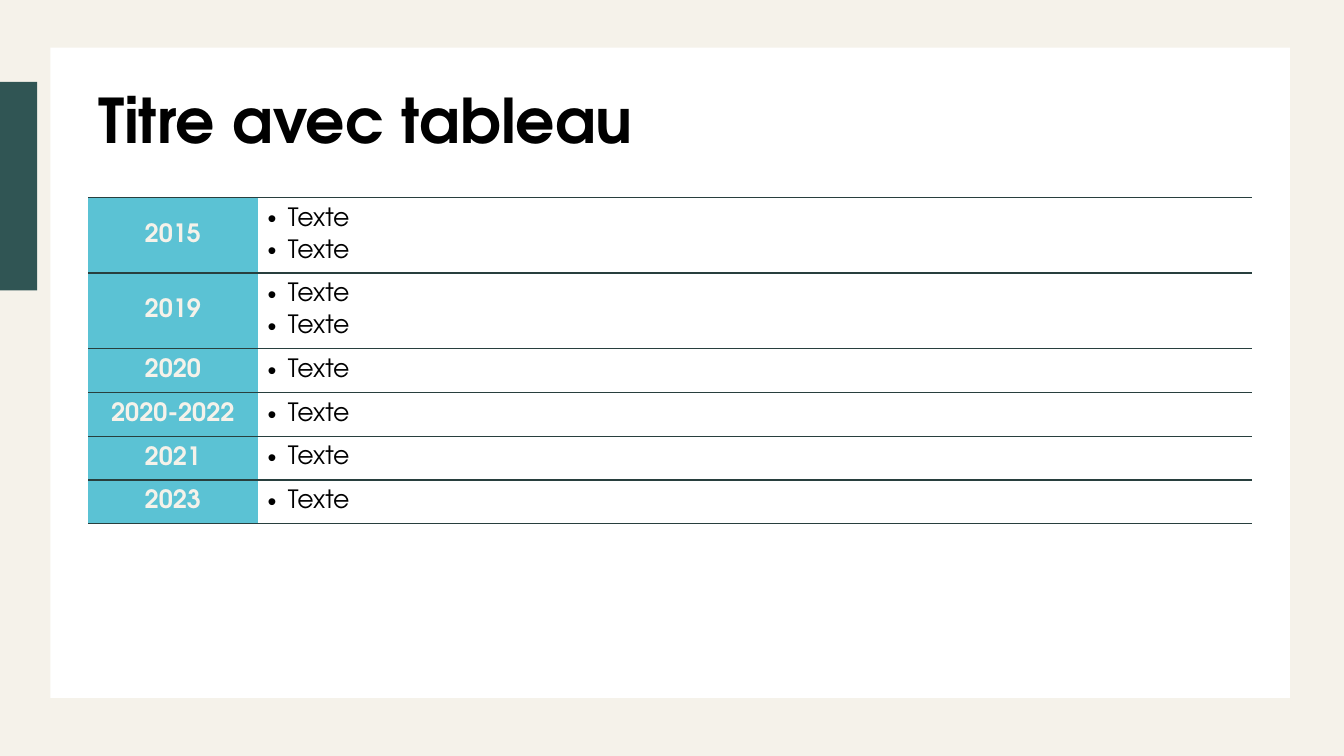
import pptx
import pptx.dml.color
import pptx.enum.shapes
import pptx.enum.text
import pptx.oxml
import pptx.oxml.ns
import pptx.util

Pt = pptx.util.Pt
RGBColor = pptx.dml.color.RGBColor
PP_ALIGN = pptx.enum.text.PP_ALIGN
MIDDLE = pptx.enum.text.MSO_ANCHOR.MIDDLE

CREAM = RGBColor(0xF5, 0xF2, 0xEA)
WHITE = RGBColor(0xFF, 0xFF, 0xFF)
BLACK = RGBColor(0x00, 0x00, 0x00)
DARK_GREEN = RGBColor(0x30, 0x55, 0x54)
RULE_GREEN = RGBColor(0x28, 0x3F, 0x3E)
TURQUOISE = RGBColor(0x5B, 0xC2, 0xD4)

FONT = "TeX Gyre Adventor"
TITLE_FONT = {"name": FONT, "size": Pt(44), "bold": True}
YEAR_FONT = {"name": FONT, "size": Pt(18), "bold": True}
TEXT_FONT = {"name": FONT, "size": Pt(18), "bold": False}
CELL_FORMAT = {
    "margin_left": Pt(7.2),
    "margin_right": Pt(7.2),
    "margin_top": Pt(7.2),
    "margin_bottom": Pt(7.2),
    "vertical_anchor": MIDDLE,
}

TIMELINE = [
    ("2015", ["Texte", "Texte"]),
    ("2019", ["Texte", "Texte"]),
    ("2020", ["Texte"]),
    ("2020-2022", ["Texte"]),
    ("2021", ["Texte"]),
    ("2023", ["Texte"]),
]
YEAR_WIDTH = 121
ROW_HEIGHT = 31
EXTRA_LINE = 22.9


def set_values(target, values):
    for name, value in values.items():
        setattr(target, name, value)


def format_font(font, values, color):
    set_values(font, values)
    font.color.rgb = color


def add_panel(slide, box, color):
    panel = slide.shapes.add_shape(
        pptx.enum.shapes.MSO_SHAPE.RECTANGLE, *map(Pt, box))
    panel.shadow.inherit = False
    panel.fill.solid()
    panel.fill.fore_color.rgb = color
    panel.line.fill.background()


def fill_title(slide, box, text):
    title = slide.shapes.title
    set_values(title, dict(zip(("left", "top", "width", "height"), map(Pt, box))))
    frame = title.text_frame
    frame.word_wrap = True
    frame.vertical_anchor = MIDDLE
    frame.text = text
    heading = frame.paragraphs[0]
    heading.alignment = PP_ALIGN.LEFT
    heading.line_spacing = 0.9
    format_font(heading.runs[0].font, TITLE_FONT, BLACK)


def rule_cell(cell):
    """Draw the top and bottom borders only; call before filling the cell."""
    properties = cell._tc.get_or_add_tcPr()
    solid = f'<a:solidFill><a:srgbClr val="{RULE_GREEN}"/></a:solidFill>'
    for side, paint in (("lnL", "<a:noFill/>"), ("lnR", "<a:noFill/>"),
                        ("lnT", solid), ("lnB", solid)):
        properties.append(pptx.oxml.parse_xml(
            f'<a:{side} {pptx.oxml.ns.nsdecls("a")} w="{Pt(1)}">{paint}</a:{side}>'))


def add_bullet(paragraph):
    properties = paragraph._p.get_or_add_pPr()
    properties.set("marL", str(Pt(14.4)))
    properties.set("indent", str(-Pt(14.4)))
    for bullet in ('buFont {} typeface="Arial"', 'buChar {} char="•"'):
        properties.append(pptx.oxml.parse_xml(
            f'<a:{bullet.format(pptx.oxml.ns.nsdecls("a"))}/>'))


def fill_year(cell, year):
    cell.fill.solid()
    cell.fill.fore_color.rgb = TURQUOISE
    cell.text = year
    paragraph = cell.text_frame.paragraphs[0]
    paragraph.alignment = PP_ALIGN.CENTER
    format_font(paragraph.runs[0].font, YEAR_FONT, CREAM)


def fill_events(cell, events):
    cell.fill.background()
    cell.text = "\n".join(events)
    for index, paragraph in enumerate(cell.text_frame.paragraphs):
        add_bullet(paragraph)
        paragraph.space_before = Pt(3 if index else 0)
        paragraph.space_after = Pt(3)
        format_font(paragraph.runs[0].font, TEXT_FONT, BLACK)


def add_timeline(slide, box, timeline):
    left, top, width = box
    heights = [ROW_HEIGHT + EXTRA_LINE * (len(events) - 1) for _, events in timeline]
    table = slide.shapes.add_table(
        len(timeline), 2, Pt(left), Pt(top), Pt(width), Pt(sum(heights))).table
    set_values(table, {"first_row": False, "horz_banding": False})
    table.columns[0].width = Pt(YEAR_WIDTH)
    table.columns[1].width = Pt(width - YEAR_WIDTH)
    for row, height, (year, events) in zip(table.rows, heights, timeline):
        row.height = Pt(height)
        for cell in row.cells:
            set_values(cell, CELL_FORMAT)
            rule_cell(cell)
        year_cell, events_cell = row.cells
        fill_year(year_cell, year)
        fill_events(events_cell, events)


def build_table_slide(presentation):
    slide = presentation.slides.add_slide(presentation.slide_layouts[5])
    slide.background.fill.solid()
    slide.background.fill.fore_color.rgb = CREAM
    add_panel(slide, (0, 58.5, 26.5, 149), DARK_GREEN)
    add_panel(slide, (36, 34, 885.5, 464.5), WHITE)
    title = slide.shapes.title._element
    title.getparent().append(title)
    fill_title(slide, (63, 48, 831, 80.5), "Titre avec tableau")
    add_timeline(slide, (63, 141, 831), TIMELINE)


def main():
    presentation = pptx.Presentation()
    presentation.slide_width = Pt(960)
    presentation.slide_height = Pt(540)
    build_table_slide(presentation)
    presentation.save("out.pptx")


if __name__ == "__main__":
    main()
